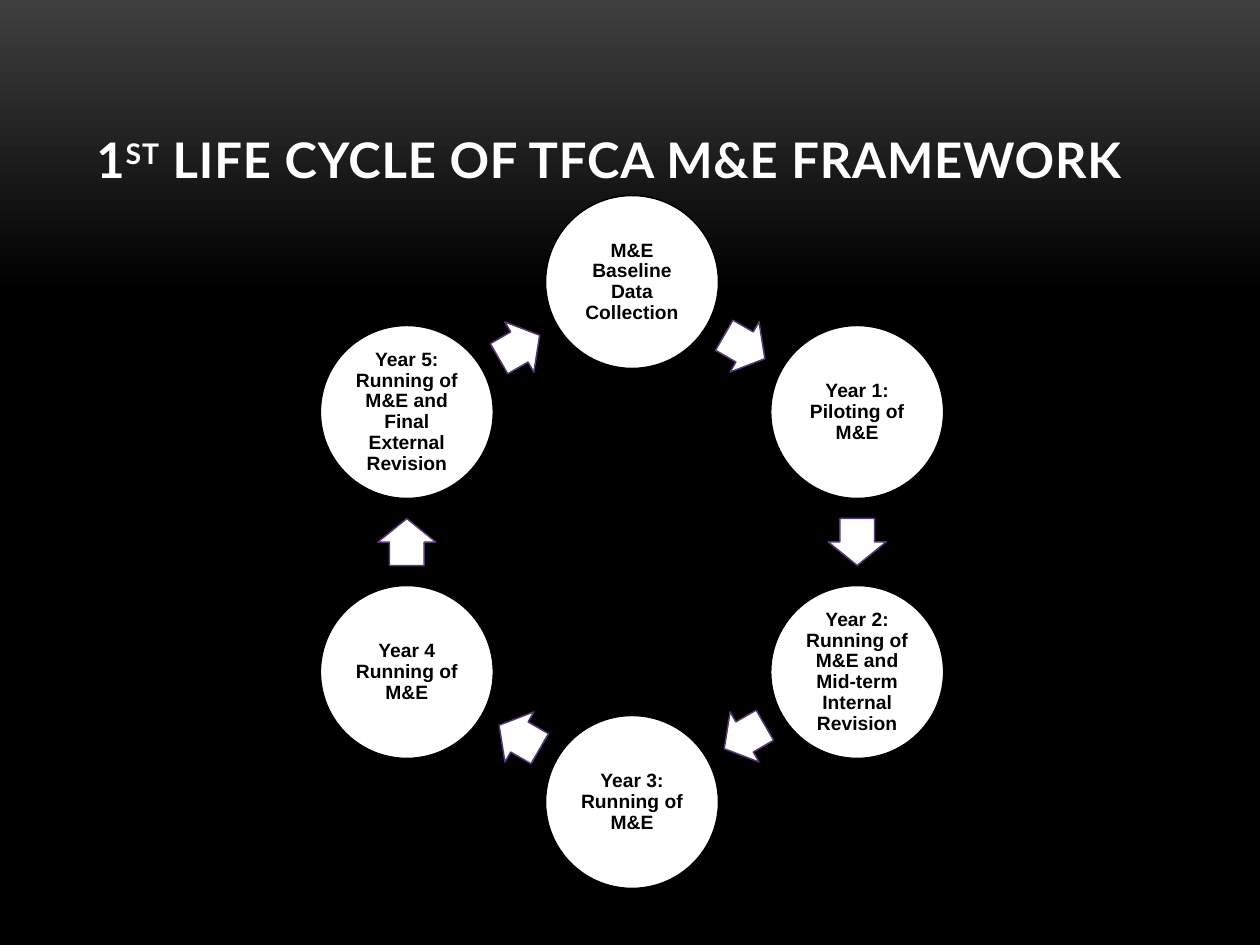
"""Build a slide with the six-step life cycle of a monitoring framework."""
from math import cos, radians, sin

from pptx import Presentation
from pptx.dml.color import RGBColor
from pptx.enum.shapes import MSO_SHAPE
from pptx.enum.text import MSO_ANCHOR, PP_ALIGN
from pptx.util import Pt

OVAL, ARROW = MSO_SHAPE.OVAL, MSO_SHAPE.RIGHT_ARROW
MIDDLE, BOTTOM = MSO_ANCHOR.MIDDLE, MSO_ANCHOR.BOTTOM
CENTER = PP_ALIGN.CENTER

TITLE = [("1", 0), ("ST", 30000), (" LIFE CYCLE OF TFCA M&E FRAMEWORK", 0)]
STEPS = [
    "M&E Baseline Data Collection",
    "Year 1: Piloting of M&E",
    "Year 2: Running of M&E and Mid-term Internal Revision",
    "Year 3: Running of M&E",
    "Year 4 Running of M&E",
    "Year 5: Running of M&E and Final External Revision",
]
WHITE, BLACK, GRAY, PURPLE = "FFFFFF", "000000", "3F3F3F", "553876"
STOPS = [(0, GRAY), (0.31, BLACK)]
MID_X, MID_Y, RADIUS = 632, 542, 260
DISC = 173
LONG, WIDE = 47, 58
INSET = 3


def px(count):
    return round(count * 914400 / 126)


def color(code):
    return RGBColor.from_string(code)


def style(font, name, size, code):
    font.name, font.size, font.bold = name, Pt(size), True
    font.color.rgb = color(code)


def spot(angle, reach):
    turn = radians(angle)
    return MID_X + reach * cos(turn), MID_Y + reach * sin(turn)


def add_part(slide, kind, mid, width, height, edge):
    left, top = mid[0] - width / 2, mid[1] - height / 2
    part = slide.shapes.add_shape(kind, px(left), px(top), px(width), px(height))
    part.shadow.inherit = False
    part.fill.solid()
    part.fill.fore_color.rgb = color(WHITE)
    part.line.color.rgb = color(edge)
    part.line.width = Pt(0.85)
    return part


def add_step(slide, label, angle):
    disc = add_part(slide, OVAL, spot(angle, RADIUS), DISC, DISC, BLACK)
    frame = disc.text_frame
    frame.word_wrap = True
    frame.vertical_anchor = MIDDLE
    frame.margin_left = frame.margin_right = px(INSET)
    frame.margin_top = frame.margin_bottom = px(INSET)
    para = frame.paragraphs[0]
    para.text = label
    para.alignment = CENTER
    para.line_spacing = 0.9
    style(para.font, "Arial", 11, BLACK)


def add_arrow(slide, angle):
    mid = spot(angle, RADIUS * cos(radians(30)))
    arrow = add_part(slide, ARROW, mid, LONG, WIDE, PURPLE)
    arrow.adjustments[0], arrow.adjustments[1] = 0.6, 0.5
    arrow.rotation = (angle + 90) % 360


def add_title(slide):
    box = slide.shapes.add_textbox(px(84), px(38), px(1092), px(157))
    frame = box.text_frame
    frame.word_wrap = True
    frame.vertical_anchor = BOTTOM
    para = frame.paragraphs[0]
    style(para.font, "Lato", 28, WHITE)
    for text, lift in TITLE:
        run = para.add_run()
        run.text = text
        props = run._r.get_or_add_rPr()
        props.set("spc", "50")
        if lift:
            props.set("baseline", str(lift))


def paint(slide):
    fill = slide.background.fill
    fill.gradient()
    fill.gradient_angle = 270
    for stop, (place, code) in zip(fill.gradient_stops, STOPS):
        stop.position = place
        stop.color.rgb = color(code)


def main():
    deck = Presentation()
    deck.slide_width, deck.slide_height = px(1260), px(945)
    slide = deck.slides.add_slide(deck.slide_layouts[6])
    paint(slide)
    add_title(slide)
    pitch = 360 / len(STEPS)
    for rank, label in enumerate(STEPS):
        angle = rank * pitch - 90
        add_step(slide, label, angle)
        add_arrow(slide, angle + pitch / 2)
    deck.save("out.pptx")


if __name__ == "__main__":
    main()
